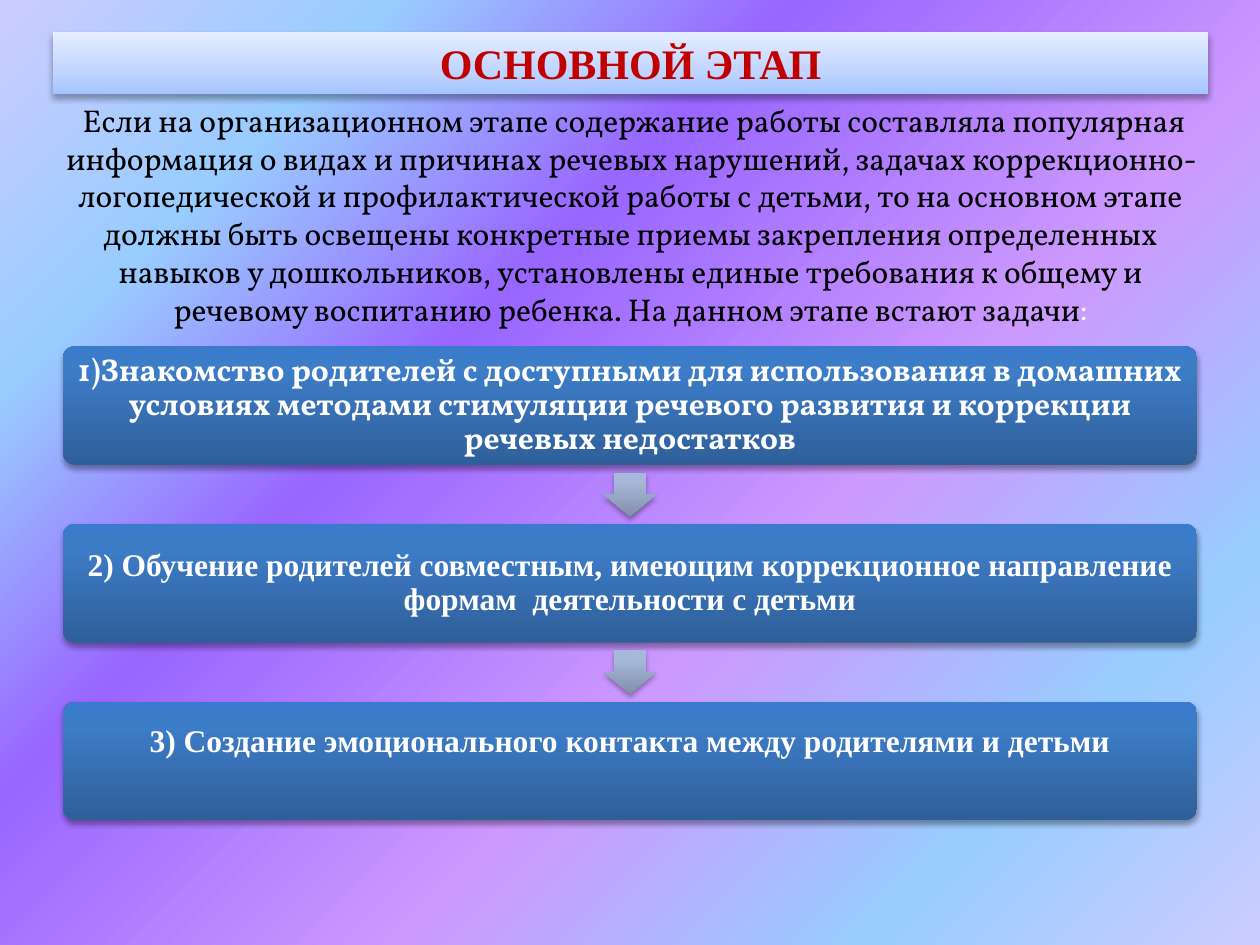
from lxml import etree
from pptx import Presentation
from pptx import util as u
from pptx.dml.color import RGBColor
from pptx.enum import shapes, text
from pptx.oxml import ns

SERIF, BOOK = "Times New Roman", "Vollkorn"
WHITE = "FFFFFF"

# Gradients: (position in percent, colour)
SKY = [(0, "CCCCFF"), (18, "99CCFF"), (36, "9966FF"),
       (61, "CC99FF"), (82, "99CCFF"), (100, "CCCCFF")]
PALE = [(0, "A4C4FF"), (35, "BFD4FF"), (100, "E6EEFF")]
BLUE = [(0, "2F5F99"), (80, "3D7CC7"), (100, "3A7CCB")]
GREY = [(0, "818FA8"), (80, "A7B9DA"), (100, "A7BADC")]

INTRO = (" Если на организационном этапе содержание работы составляла популярная "
         "информация о видах и причинах речевых нарушений, задачах "
         "коррекционно-логопедической и профилактической работы с детьми, то на "
         "основном этапе должны быть освещены конкретные приемы закрепления "
         "определенных навыков у дошкольников, установлены единые требования к "
         "общему и речевому воспитанию ребенка. На данном этапе встают задачи")

# Task text, font, bottom inset
TASKS = [
    ("1)Знакомство родителей с доступными для использования в домашних условиях "
     "методами стимуляции речевого развития и коррекции речевых недостатков",
     BOOK, 0.07),
    ("2) Обучение родителей совместным, имеющим коррекционное направление "
     "формам  деятельности с детьми", SERIF, 0.07),
    ("3) Создание эмоционального контакта между родителями и детьми", SERIF, 0.37),
]

PAGE_WIDTH = 10
TASK_TOP, TASK_WIDTH, TASK_HEIGHT, TASK_STEP = 2.75, 9, 0.94, 1.41
ARROW_LENGTH, ARROW_BREADTH = 0.35, 0.42


def colour(value):
    return RGBColor.from_string(value)


def add_element(parent, tag, **attributes):
    return etree.SubElement(parent, ns.qn(tag),
                            {key: str(value) for key, value in attributes.items()})


def add_colour(parent, value):
    return add_element(parent, "a:srgbClr", val=value)


def add_gradient(parent, stops, angle):
    gradient = add_element(parent, "a:gradFill", rotWithShape=0)
    stop_list = add_element(gradient, "a:gsLst")
    for position, value in stops:
        add_colour(add_element(stop_list, "a:gs", pos=position * 1000), value)
    add_element(gradient, "a:lin", ang=angle * 60000, scaled=0)
    return gradient


def add_shadow(parent, opacity, blur, distance):
    effects = add_element(parent, "a:effectLst")
    shadow = add_element(effects, "a:outerShdw", blurRad=u.Pt(blur), dist=u.Pt(distance),
                         dir=90 * 60000, rotWithShape=0)
    add_element(add_colour(shadow, "000000"), "a:alpha", val=opacity * 1000)


def decorate(shape, stops, opacity=35, blur=3.1, distance=1.8):
    """Upward gradient, no outline, soft shadow below."""
    properties = shape._element.spPr
    add_gradient(properties, stops, 270)
    shape.line.fill.background()
    add_shadow(properties, opacity, blur, distance)


def place(shape, left, top, width, height):
    shape.left, shape.top = u.Inches(left), u.Inches(top)
    shape.width, shape.height = u.Inches(width), u.Inches(height)


def add_run(para, content, font, size, value, bold=False):
    span = para.add_run()
    span.text = content
    span.font.name, span.font.size, span.font.bold = font, u.Pt(size), bold
    span.font.color.rgb = colour(value)


def centred_paragraph(shape, anchor):
    frame = shape.text_frame
    frame.word_wrap = True
    frame.vertical_anchor = anchor
    para = frame.paragraphs[0]
    para.alignment = text.PP_ALIGN.CENTER
    return para


def paint_background(page):
    page.background.fill.solid()
    properties = page._element.cSld.find(ns.qn("p:bg")).find(ns.qn("p:bgPr"))
    solid = properties[0]
    properties.replace(solid, add_gradient(properties, SKY, 45))


def add_heading(page):
    box = page.shapes.title
    place(box, 0.42, 0.25, 9.17, 0.5)
    decorate(box, PALE, 32, 3.5, 2.2)
    para = centred_paragraph(box, text.MSO_ANCHOR.MIDDLE)
    add_run(para, "ОСНОВНОЙ ЭТАП", SERIF, 24, "C00000", True)


def add_intro(page):
    box = page.shapes.add_textbox(u.Inches(0.42), u.Inches(0.75),
                                  u.Inches(9.17), u.Inches(1.92))
    para = centred_paragraph(box, text.MSO_ANCHOR.TOP)
    add_run(para, INTRO, BOOK, 18, "000000")
    add_run(para, ":", BOOK, 18, WHITE)


def add_task(page, top, content, font, bottom_inset):
    box = page.shapes.add_shape(
        shapes.MSO_SHAPE.ROUNDED_RECTANGLE, u.Inches((PAGE_WIDTH - TASK_WIDTH) / 2),
        u.Inches(top), u.Inches(TASK_WIDTH), u.Inches(TASK_HEIGHT))
    box.adjustments[0] = 0.1
    decorate(box, BLUE)
    frame = box.text_frame
    frame.margin_left = frame.margin_right = frame.margin_top = u.Inches(0.07)
    frame.margin_bottom = u.Inches(bottom_inset)
    para = centred_paragraph(box, text.MSO_ANCHOR.MIDDLE)
    para.line_spacing = 0.9
    add_run(para, content, font, 18, WHITE, True)


def add_arrow(page, middle):
    arrow = page.shapes.add_shape(
        shapes.MSO_SHAPE.RIGHT_ARROW, u.Inches((PAGE_WIDTH - ARROW_LENGTH) / 2),
        u.Inches(middle - ARROW_BREADTH / 2),
        u.Inches(ARROW_LENGTH), u.Inches(ARROW_BREADTH))
    arrow.rotation = 90
    arrow.adjustments[0], arrow.adjustments[1] = 0.6, 0.5
    decorate(arrow, GREY)


def main():
    deck = Presentation()
    deck.slide_width, deck.slide_height = u.Inches(PAGE_WIDTH), u.Inches(7.5)
    page = deck.slides.add_slide(deck.slide_layouts.get_by_name("Title Only"))
    paint_background(page)
    add_heading(page)
    add_intro(page)

    # Tasks from top to bottom, with an arrow in each gap
    for index, task in enumerate(TASKS):
        top = TASK_TOP + index * TASK_STEP
        if index:
            add_arrow(page, top - (TASK_STEP - TASK_HEIGHT) / 2)
        add_task(page, top, *task)

    deck.save("out.pptx")


if __name__ == "__main__":
    main()
